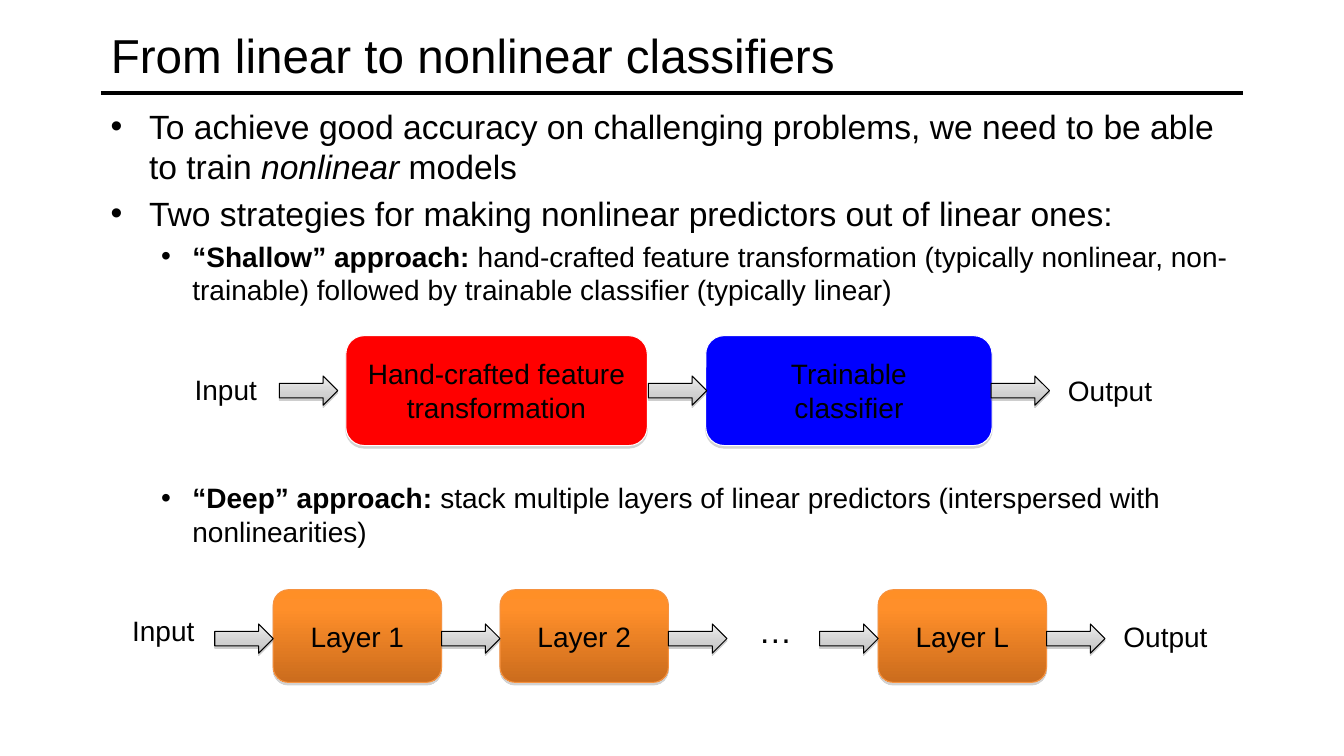
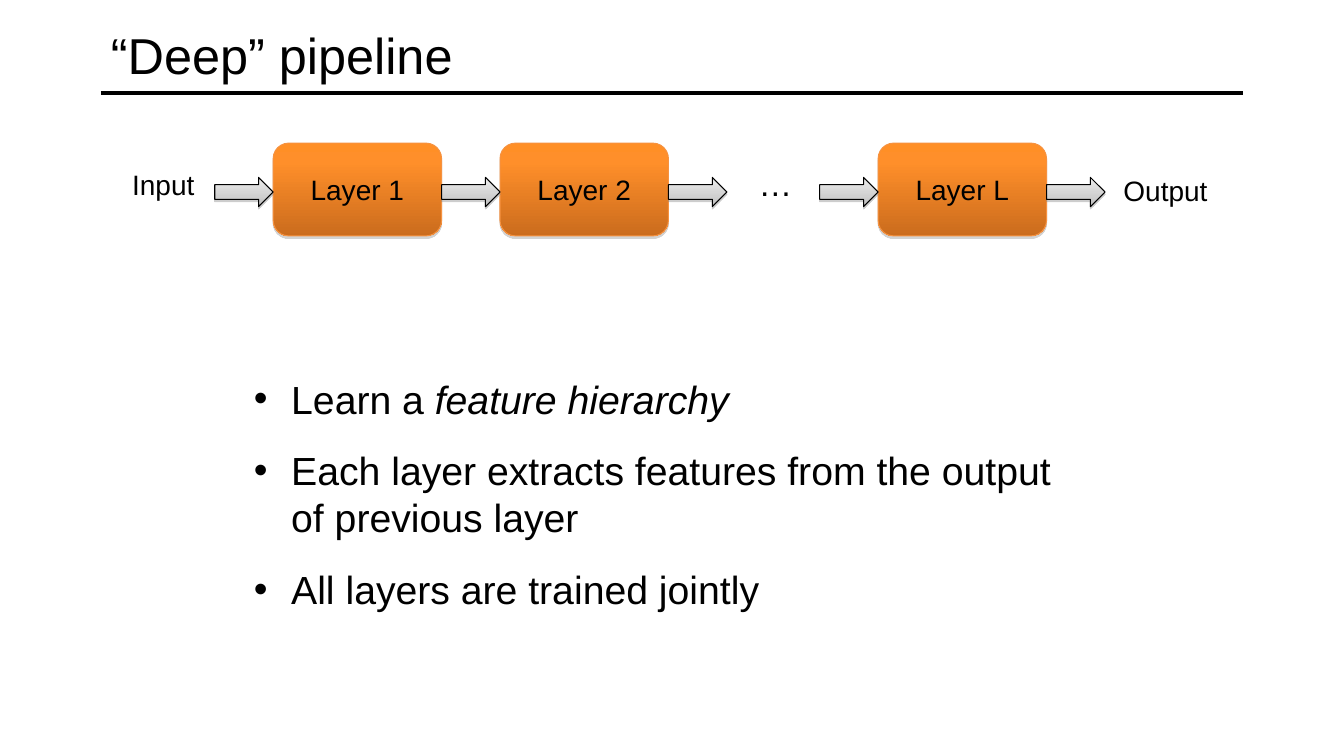
from dataclasses import dataclass

import pptx
import pptx.dml.color
import pptx.enum.shapes
import pptx.enum.text
import pptx.oxml.ns
import pptx.oxml.xmlchemy
import pptx.presentation
import pptx.shapes.autoshape
import pptx.slide
import pptx.text.text
import pptx.util
from lxml import etree

Inches = pptx.util.Inches
Pt = pptx.util.Pt
qn = pptx.oxml.ns.qn
Kind = pptx.enum.shapes.MSO_SHAPE
Align = pptx.enum.text.PP_ALIGN
Anchor = pptx.enum.text.MSO_ANCHOR
Slide = pptx.slide.Slide
Shape = pptx.shapes.autoshape.Shape
Para = pptx.text.text._Paragraph


@dataclass(frozen=True)
class Theme:
    font: str = "Arial"
    ink: str = "000000"
    white: str = "FFFFFF"
    red: str = "FF0000"
    blue: str = "0000FF"
    edge: str = "F69240"
    shade: str = "808080"
    layer: tuple = ((0, "FF8F26"), (20, "FF8F2A"), (100, "CB6C1D"))
    metal: tuple = ((0, "EDEDED"), (65, "D0D0D0"), (100, "BCBCBC"))
    label: int = 20
    point: int = 24
    large: int = 28


@dataclass(frozen=True)
class Box:
    left: float
    top: float
    width: float
    height: float

    def place(self) -> tuple:
        return tuple(Inches(n) for n in (self.left, self.top, self.width, self.height))


@dataclass(frozen=True)
class Item:
    runs: tuple
    size: int
    level: int = 0
    indent: float = 0.38
    hang: float = 0.38
    after: int = 0


THEME = Theme()
HEAD = Box(1, 0.08, 11.33, 0.92)
ARROW = (0.58, 0.29)
LAYER = (1.67, 0.92)


def rgb(code: str) -> pptx.dml.color.RGBColor:
    return pptx.dml.color.RGBColor.from_string(code)


def style(para: Para, size: int) -> None:
    para.font.name = THEME.font
    para.font.size = Pt(size)
    para.font.color.rgb = rgb(THEME.ink)


def blend(shape: Shape, stops: tuple) -> None:
    shape.fill.gradient()
    shape.fill.gradient_angle = 270
    group = shape._element.spPr.find(".//" + qn("a:gsLst"))
    for old in list(group):
        group.remove(old)
    for pos, code in stops:
        stop = etree.SubElement(group, qn("a:gs"), pos=str(pos * 1000))
        etree.SubElement(stop, qn("a:srgbClr"), val=code)


def shadow(shape: Shape, alpha: int, gap: float) -> None:
    shape.shadow.inherit = False
    group = shape._element.spPr.find(qn("a:effectLst"))
    cast = etree.SubElement(group, qn("a:outerShdw"), blurRad="0",
                            dist=str(int(Pt(gap))), dir="5400000", rotWithShape="0")
    tone = etree.SubElement(cast, qn("a:srgbClr"), val=THEME.shade)
    etree.SubElement(tone, qn("a:alpha"), val=str(alpha * 1000))


def outline(shape: Shape, code: str) -> None:
    shape.line.color.rgb = rgb(code)
    shape.line.width = Pt(0.75)


def block(slide: Slide, box: Box, text: str, fill: str | tuple, edge: str) -> None:
    shape = slide.shapes.add_shape(Kind.ROUNDED_RECTANGLE, *box.place())
    if isinstance(fill, tuple):
        blend(shape, fill)
    else:
        shape.fill.solid()
        shape.fill.fore_color.rgb = rgb(fill)
    outline(shape, edge)
    shadow(shape, 35, 1.8)
    frame = shape.text_frame
    frame.word_wrap = True
    frame.vertical_anchor = Anchor.MIDDLE
    para = frame.paragraphs[0]
    para.text = text
    para.alignment = Align.CENTER
    style(para, THEME.label)


def arrow(slide: Slide, left: float, top: float) -> None:
    shape = slide.shapes.add_shape(Kind.RIGHT_ARROW, *Box(left, top, *ARROW).place())
    blend(shape, THEME.metal)
    outline(shape, THEME.ink)
    shadow(shape, 38, 1.6)


def label(slide: Slide, box: Box, text: str, size: int = THEME.label) -> None:
    frame = slide.shapes.add_textbox(*box.place()).text_frame
    frame.word_wrap = False
    para = frame.paragraphs[0]
    para.text = text
    para.alignment = Align.CENTER
    style(para, size)


def bullets(slide: Slide, box: Box, items: list[Item]) -> None:
    frame = slide.shapes.add_textbox(*box.place()).text_frame
    frame.word_wrap = True
    for rank, item in enumerate(items):
        para = frame.add_paragraph() if rank else frame.paragraphs[0]
        para.level = item.level
        props = para._p.get_or_add_pPr()
        props.set("marL", str(Inches(item.indent)))
        props.set("indent", str(-Inches(item.hang)))
        etree.SubElement(props, qn("a:buFont"), typeface=THEME.font)
        etree.SubElement(props, qn("a:buChar"), char="•")
        style(para, item.size)
        if rank:
            para.space_before = Pt(item.size * 0.2)
        para.space_after = Pt(item.after)
        for text, look in item.runs:
            run = para.add_run()
            run.text = text
            if look == "bold":
                run.font.bold = True
            elif look == "slant":
                run.font.italic = True


def start(deck: pptx.presentation.Presentation, text: str, size: int) -> Slide:
    slide = deck.slides.add_slide(deck.slide_layouts[5])
    title = slide.shapes.title
    title.left, title.top, title.width, title.height = HEAD.place()
    frame = title.text_frame
    frame.auto_size = pptx.enum.text.MSO_AUTO_SIZE.NONE
    frame.vertical_anchor = Anchor.MIDDLE
    para = frame.paragraphs[0]
    para.text = text
    para.alignment = Align.LEFT
    style(para, size)
    rule = slide.shapes.add_connector(
        pptx.enum.shapes.MSO_CONNECTOR.STRAIGHT,
        Inches(HEAD.left), Inches(0.92), Inches(HEAD.left + HEAD.width), Inches(0.92))
    rule.line.color.rgb = rgb(THEME.ink)
    rule.line.width = Pt(3)
    etree.SubElement(rule._element.spPr, qn("a:effectLst"))
    return slide


def stack(slide: Slide, top: float) -> None:
    lefts = {"Layer 1": 2.71, "Layer 2": 4.96, "Layer L": 8.71}
    for text, left in lefts.items():
        block(slide, Box(left, top, *LAYER), text, THEME.layer, THEME.edge)
        arrow(slide, left - ARROW[0], top + 0.34)
    for text in ("Layer 2", "Layer L"):
        arrow(slide, lefts[text] + LAYER[0], top + 0.34)
    label(slide, Box(1, top + 0.19, 1.24, 0.44), "Input")
    label(slide, Box(7.42, top + 0.15, 0.54, 0.5), "…", THEME.point)
    label(slide, Box(11.04, top + 0.25, 1.04, 0.44), "Output")


def approach(name: str, text: str) -> Item:
    return Item(((name, "bold"), (text, "")), THEME.label, 1, 0.81, 0.31)


def compare(deck: pptx.presentation.Presentation) -> None:
    slide = start(deck, "From linear to nonlinear classifiers", 34)
    bullets(slide, Box(1, 1, 11.33, 2.2), [
        Item((("To achieve good accuracy on challenging problems, "
               "we need to be able to train ", ""),
              ("nonlinear", "slant"), (" models", "")), THEME.point),
        Item((("Two strategies for making nonlinear predictors "
               "out of linear ones:", ""),), THEME.point),
        approach("“Shallow” approach: ",
                 "hand-crafted feature transformation (typically nonlinear, "
                 "non-trainable) followed by trainable classifier (typically linear)"),
    ])
    block(slide, Box(3.43, 3.33, 2.99, 1.09), "Hand-crafted feature transformation",
          THEME.red, THEME.white)
    block(slide, Box(7, 3.33, 2.84, 1.09), "Trainable\vclassifier",
          THEME.blue, THEME.white)
    for left in (2.77, 6.43, 9.83):
        arrow(slide, left, 3.73)
    label(slide, Box(1.46, 3.65, 1.56, 0.44), "Input")
    label(slide, Box(10.49, 3.66, 1.04, 0.44), "Output")
    bullets(slide, Box(1, 4.72, 11.33, 0.8), [
        approach("“Deep” approach: ",
                 "stack multiple layers of linear predictors "
                 "(interspersed with nonlinearities)"),
    ])
    stack(slide, 5.85)


def deepen(deck: pptx.presentation.Presentation) -> None:
    slide = start(deck, "“Deep” pipeline", 36)
    stack(slide, 1.42)
    points = (
        (("Learn a ", ""), ("feature hierarchy", "slant")),
        (("Each layer extracts features from the output of previous layer", ""),),
        (("All layers are trained jointly", ""),),
    )
    bullets(slide, Box(2.42, 3.67, 8.5, 3.17),
            [Item(runs, THEME.large, 1, 0.37, 0.37, 12) for runs in points])


def main() -> None:
    deck = pptx.Presentation()
    deck.slide_width = Inches(13.33)
    deck.slide_height = Inches(7.5)
    compare(deck)
    deepen(deck)
    deck.save("out.pptx")


if __name__ == "__main__":
    main()
